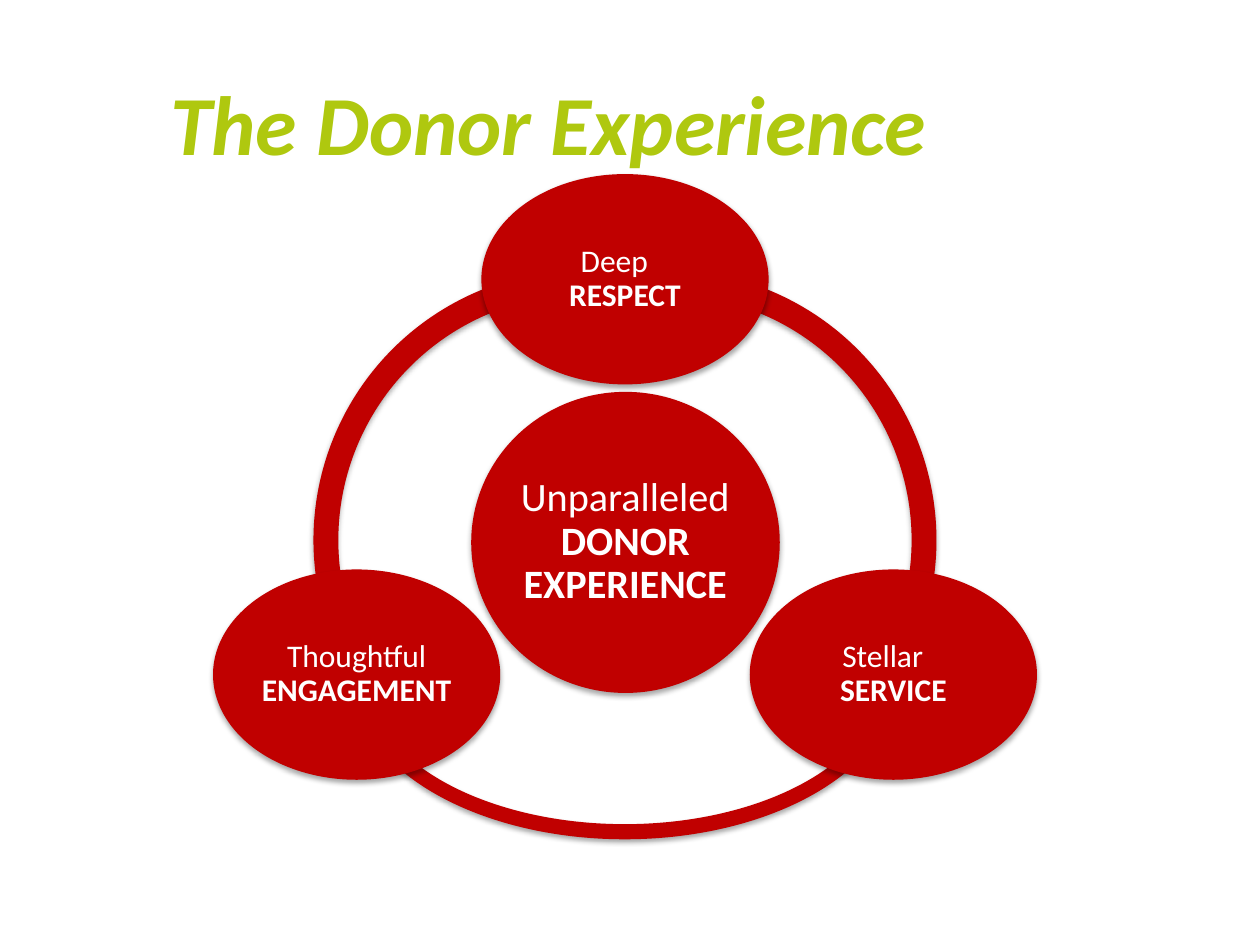
"""Build the donor experience slide: a hub inside a ring of three pillars."""
from dataclasses import dataclass

from lxml import etree
from pptx import Presentation
from pptx import util as u
from pptx.dml.color import RGBColor
from pptx.enum import shapes, text
from pptx.oxml.ns import qn


@dataclass(frozen=True)
class Theme:
    font: str = "Calibri"
    red: RGBColor = RGBColor(0xC0, 0x00, 0x00)
    green: RGBColor = RGBColor(0xAF, 0xC8, 0x0F)
    white: RGBColor = RGBColor(0xFF, 0xFF, 0xFF)
    title_size: int = 48
    hub_size: int = 23
    pillar_size: int = 18
    inset: float = 0.08


@dataclass(frozen=True)
class Box:
    left: float
    top: float
    width: float
    height: float

    def lengths(self) -> list[u.Length]:
        return [u.Cm(v) for v in (self.left, self.top, self.width, self.height)]


@dataclass(frozen=True)
class Arc:
    box: Box
    start: float
    end: float


@dataclass(frozen=True)
class Bubble:
    box: Box
    lead: str
    strong: str
    size: int
    hang: float = 0


THEME = Theme()
PILLAR_W, PILLAR_H = 5.79, 4.24
CENTER_X, SPREAD = 12.6, 5.41
TOP_Y, LOWER_Y = 3.51, 11.48


def pillar(column: int, top: float, lead: str, strong: str, hang: float = 0) -> Bubble:
    left = CENTER_X + column * SPREAD - PILLAR_W / 2
    return Bubble(Box(left, top, PILLAR_W, PILLAR_H), lead, strong, THEME.pillar_size, hang)


ARCS = [
    Arc(Box(6.32, 5.44, 10.9, 10.9), 89.5, 167.44),
    Arc(Box(7.06, 10.29, 11.07, 6.63), 0, 108),
    Arc(Box(7.98, 5.44, 10.9, 10.9), 156.64, 18.48),
]
BUBBLES = [
    Bubble(Box(9.5, 7.9, 6.22, 6.07), "Unparalleled ", "DONOR EXPERIENCE", THEME.hub_size),
    pillar(0, TOP_Y, "Deep ", "RESPECT", 0.43),
    pillar(1, LOWER_Y, "Stellar ", "SERVICE", 0.43),
    pillar(-1, LOWER_Y, "Thoughtful ", "ENGAGEMENT"),
]


def add_red_shape(s, kind, box: Box):
    """Add a red shape with a soft shadow below it."""
    sp = s.shapes.add_shape(kind, *box.lengths())
    sp.fill.solid()
    sp.fill.fore_color.rgb = THEME.red
    sp.line.fill.background()
    sp.shadow.inherit = False
    effects = sp.element.spPr.find(qn("a:effectLst"))
    shadow = etree.SubElement(effects, qn("a:outerShdw"), blurRad="40000", dist="23000",
                              dir="5400000", rotWithShape="0")
    color = etree.SubElement(shadow, qn("a:srgbClr"), val="000000")
    etree.SubElement(color, qn("a:alpha"), val="35000")
    return sp


def style_run(r, size: int, color: RGBColor, bold: bool = False, italic: bool = False) -> None:
    """Set the typeface, size, colour and emphasis of a run."""
    r.font.name, r.font.size = THEME.font, u.Pt(size)
    r.font.color.rgb = color
    r.font.bold, r.font.italic = bold, italic


def draw_arc(s, arc: Arc) -> None:
    """Draw one segment of the ring."""
    sp = add_red_shape(s, shapes.MSO_SHAPE.BLOCK_ARC, arc.box)
    for i, value in enumerate((arc.start, arc.end, 0.046)):
        sp.adjustments[i] = value


def draw_bubble(s, bubble: Bubble) -> None:
    """Draw an ellipse whose first line can hang left of the second."""
    sp = add_red_shape(s, shapes.MSO_SHAPE.OVAL, bubble.box)
    tf = sp.text_frame
    tf.word_wrap = True
    tf.vertical_anchor = text.MSO_ANCHOR.MIDDLE
    tf.margin_left = tf.margin_top = tf.margin_bottom = u.Cm(THEME.inset)
    tf.margin_right = u.Cm(THEME.inset + bubble.hang)
    p = tf.paragraphs[0]
    p.text = bubble.lead
    p.alignment = text.PP_ALIGN.CENTER
    p.line_spacing = 0.9
    if bubble.hang:
        hang = u.Cm(bubble.hang)
        pPr = p._p.get_or_add_pPr()
        pPr.set("marL", str(int(hang)))
        pPr.set("indent", str(-int(hang)))
    p.add_run().text = bubble.strong
    for r, bold in zip(p.runs, (False, True)):
        style_run(r, bubble.size, THEME.white, bold)


def draw_title(s, title: str, box: Box) -> None:
    """Draw the slide title."""
    tf = s.shapes.add_textbox(*box.lengths()).text_frame
    tf.word_wrap = True
    tf.vertical_anchor = text.MSO_ANCHOR.MIDDLE
    tf.text = title
    style_run(tf.paragraphs[0].runs[0], THEME.title_size, THEME.green, True, True)


def main() -> None:
    """Build and save the slide."""
    prs = Presentation()
    prs.slide_width, prs.slide_height = u.Cm(25.4), u.Cm(19.05)
    s = prs.slides.add_slide(prs.slide_layouts[6])
    for arc in ARCS:
        draw_arc(s, arc)
    for bubble in BUBBLES:
        draw_bubble(s, bubble)
    draw_title(s, "The Donor Experience", Box(3.18, 1.7, 19.89, 1.52))
    prs.save("out.pptx")


if __name__ == "__main__":
    main()
